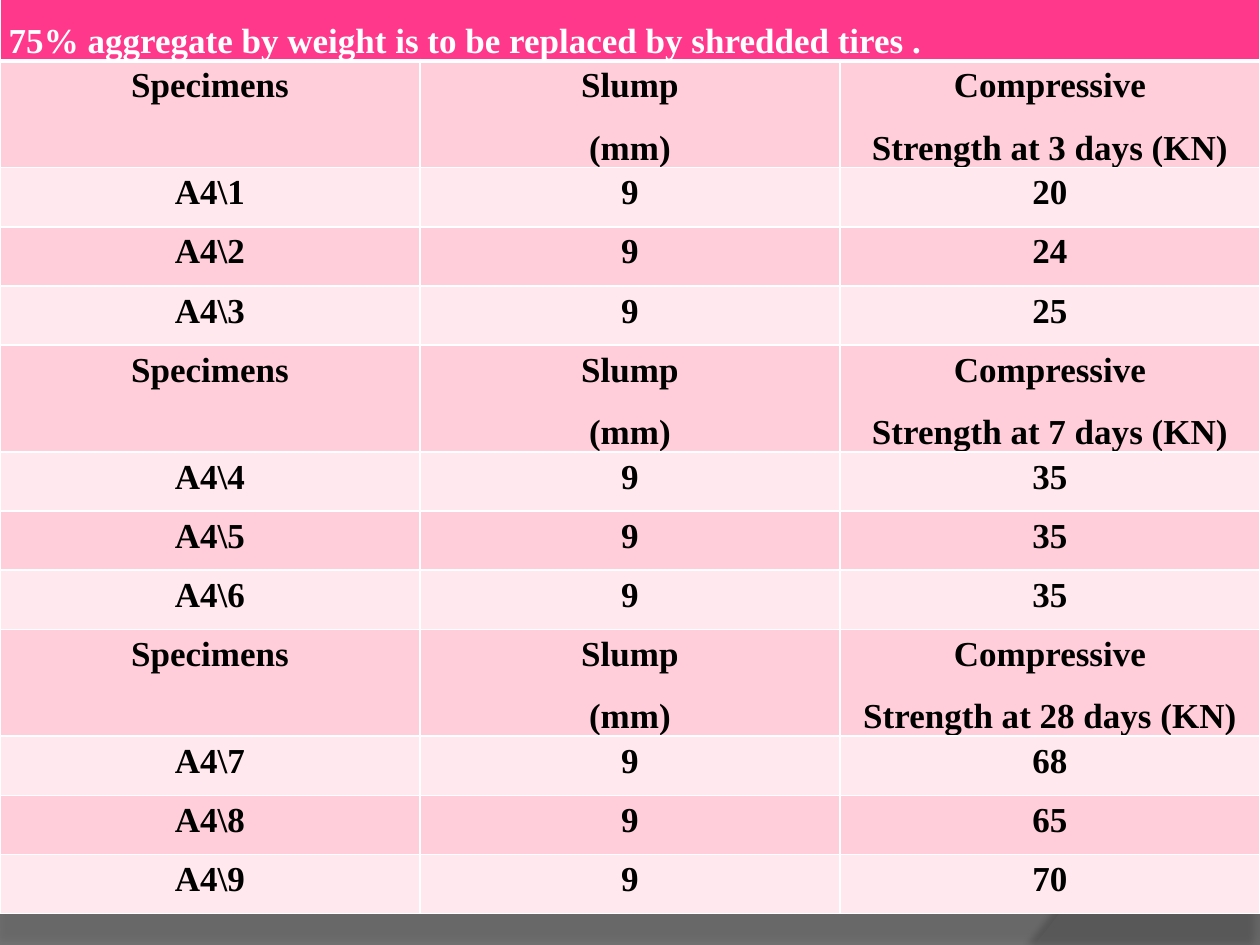
from dataclasses import dataclass

from lxml.etree import SubElement
from pptx import Presentation
from pptx.dml.color import RGBColor as Rgb
from pptx.enum.text import MSO_ANCHOR as Anchor, PP_ALIGN as Align
from pptx.oxml.ns import qn
from pptx.util import Pt

HUES = {
    "back": "666666", "wave": "7F7F7F", "side": "5E5E5E", "shade": "000000",
    "title": "FF388C", "dark": "FFCEDA", "light": "FFE8EE",
    "line": "FFFFFF", "white": "FFFFFF", "ink": "000000",
}
FONT, SIZE = "Times New Roman", 20
WIDE, HIGH = 720, 540
TITLE_H, HEAD_H, DATA_H = 60, 61, 33.8
TOP = -25.2
TITLE = "75% aggregate by weight is to be replaced by shredded tires ."

Point = tuple[float, float]


@dataclass
class Group:
    days: int
    loads: tuple[int, ...]


@dataclass
class Shade:
    alpha: int
    dist: float
    angle: int


GROUPS = [
    Group(3, (20, 24, 25)),
    Group(7, (35, 35, 35)),
    Group(28, (68, 65, 70)),
]


def curve(a: Point, b: Point, c: Point, d: Point, steps: int = 40) -> list[Point]:
    """Sample a cubic Bezier from a to d, leaving out a."""
    spots = []
    for n in range(1, steps + 1):
        t = n / steps
        u = 1 - t
        parts = (u**3, 3 * u * u * t, 3 * u * t * t, t**3)
        spots.append(tuple(sum(k * p[i] for k, p in zip(parts, (a, b, c, d)))
                           for i in (0, 1)))
    return spots


def add_alpha(color, value: int) -> None:
    SubElement(color, qn("a:alpha"), val=str(value * 1000))


def draw_form(slide, spots: list[Point], hue: str, alpha: int, shade: Shade) -> None:
    (x, y), *rest = [(Pt(a), Pt(b)) for a, b in spots]
    pen = slide.shapes.build_freeform(x, y, scale=1.0)
    pen.add_line_segments(rest, close=True)
    form = pen.convert_to_shape()
    form.fill.solid()
    form.fill.fore_color.rgb = Rgb.from_string(HUES[hue])
    form.line.fill.background()
    form.shadow.inherit = False
    props = form.element.spPr
    add_alpha(props.find(f"{qn('a:solidFill')}/{qn('a:srgbClr')}"), alpha)
    glow = SubElement(props.find(qn("a:effectLst")), qn("a:outerShdw"),
                      blurRad=str(Pt(4)), dist=str(Pt(shade.dist)),
                      dir=str(shade.angle * 60000), algn="ctr", rotWithShape="0")
    add_alpha(SubElement(glow, qn("a:srgbClr"), val=HUES["shade"]), shade.alpha)


def add_edges(cell, top: float, bottom: float) -> None:
    props = cell._tc.get_or_add_tcPr()
    for side, width in (("L", 1), ("R", 1), ("T", top), ("B", bottom)):
        line = SubElement(props, qn(f"a:ln{side}"), w=str(Pt(width)))
        fill = SubElement(line, qn("a:solidFill"))
        SubElement(fill, qn("a:srgbClr"), val=HUES["line"])


def fill_cell(cell, text: str, hue: str, ink: str = "ink", align=Align.CENTER) -> None:
    cell.margin_left = cell.margin_right = Pt(5)
    cell.margin_top = cell.margin_bottom = 0
    cell.fill.solid()
    cell.fill.fore_color.rgb = Rgb.from_string(HUES[hue])
    cell.text = text
    for para in cell.text_frame.paragraphs:
        para.alignment = align
        para.line_spacing = 1.15
        para.space_after = Pt(10)
        font = para.font
        font.name, font.size, font.bold = FONT, Pt(SIZE), True
        font.color.rgb = Rgb.from_string(HUES[ink])


def draw_table(slide) -> None:
    rows, highs = [], [TITLE_H]
    for group in GROUPS:
        rows.append(("Specimens", "Slump\n(mm)",
                     f"Compressive\nStrength at {group.days} days (KN)"))
        highs.append(HEAD_H)
        for load in group.loads:
            mark = sum(highs.count(h) for h in {DATA_H}) + 1
            rows.append((f"A4\\{mark}", "9", str(load)))
            highs.append(DATA_H)

    table = slide.shapes.add_table(len(highs), 3, 0, Pt(TOP), Pt(WIDE),
                                   Pt(sum(highs))).table
    for col in table.columns:
        col.width = Pt(WIDE / 3)
    for i, (row, high) in enumerate(zip(table.rows, highs)):
        row.height = Pt(high)
        for cell in row.cells:
            add_edges(cell, 3 if i == 1 else 1, 3 if i == 0 else 1)

    head = table.cell(0, 0)
    head.merge(table.cell(0, 2))
    fill_cell(head, TITLE, "title", "white", Align.LEFT)
    head.vertical_anchor = Anchor.BOTTOM
    for i, texts in enumerate(rows):
        for j, text in enumerate(texts):
            fill_cell(table.cell(i + 1, j), text, "light" if i % 2 else "dark")


def main() -> None:
    deck = Presentation()
    deck.slide_width, deck.slide_height = Pt(WIDE), Pt(HIGH)
    slide = deck.slides.add_slide(deck.slide_layouts[6])
    back = slide.background.fill
    back.solid()
    back.fore_color.rgb = Rgb.from_string(HUES["back"])

    wave = curve((WIDE, 374.4), (402.5, 524.9), (281.5, 517.7), (0, 507.6))
    draw_form(slide, [(0, HIGH), (WIDE, HIGH), (WIDE, 374.4), *wave],
              "wave", 45, Shade(35, 3.5, 270))
    side = curve((591, HIGH), (673.2, 445.7), (733, 216), (576, 0))
    draw_form(slide, [(WIDE, 0), (WIDE, HIGH), (591, HIGH), *side],
              "side", 40, Shade(45, 4, 180))
    draw_table(slide)
    deck.save("out.pptx")


if __name__ == "__main__":
    main()
